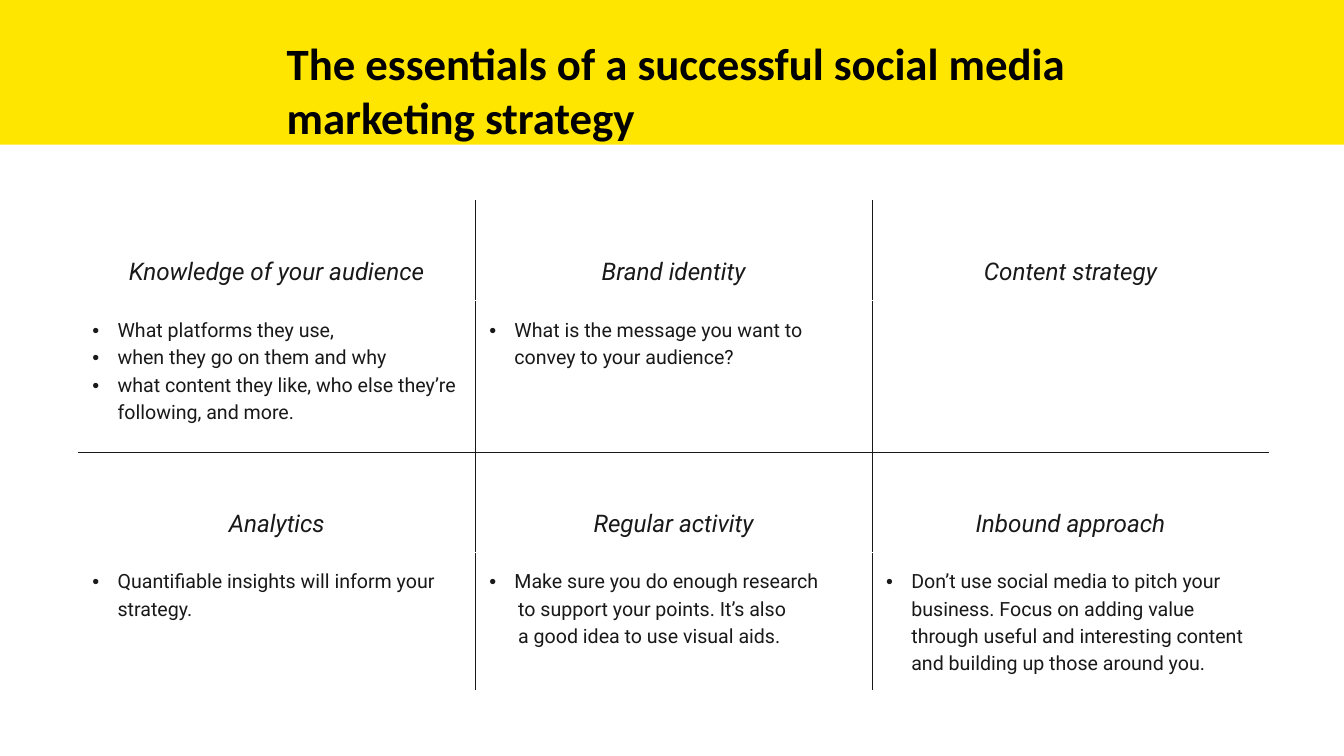
from dataclasses import dataclass

from lxml.etree import SubElement
from pptx import Presentation
from pptx.dml.color import RGBColor as Color
from pptx.enum.shapes import MSO_SHAPE as Preset
from pptx.enum.text import MSO_ANCHOR as Anchor, PP_ALIGN as Align
from pptx.oxml.ns import qn
from pptx.util import Pt


@dataclass(frozen=True)
class Theme:
    band: str = "FEE600"
    paper: str = "FFFFFF"
    ink: str = "191919"
    title_ink: str = "000000"
    title_font: str = "Calibri"
    body_font: str = "Roboto"
    title_size: float = 48
    heading_size: float = 26
    body_size: float = 21
    leading: float = 1.4
    rule: float = 0.75
    cell_inset: float = 15
    bullet_indent: float = 27
    plain_indent: float = 31


HEADINGS = [
    ["Knowledge of your audience", "Brand identity", "Content strategy"],
    ["Analytics", "Regular activity", "Inbound approach"],
]
# Each cell holds its bulleted lines, then its plain lines.
DETAILS = [
    [
        (["What platforms they use,", "when they go on them and why",
          "what content they like, who else they’re following, and more."], []),
        (["What is the message you want to convey to your audience?"], []),
        ([], []),
    ],
    [
        (["Quantifiable insights will inform your strategy."], []),
        (["Make sure you do enough research"],
         ["to support your points. It’s also", "a good idea to use visual aids."]),
        (["Don’t use social media to pitch your business. Focus on adding value "
          "through useful and interesting content and building up those around you."], []),
    ],
]
COLUMN_WIDTH = 425.25
ROW_HEIGHTS = [107.25, 162, 107.25, 137.5]


def write(para, text, *, font, size, color, bold=False, italic=False,
          align=None, leading=None):
    span = para.add_run()
    span.text = text
    span.font.name = font
    span.font.size = Pt(size)
    span.font.bold = bold
    span.font.italic = italic
    span.font.color.rgb = Color.from_string(color)
    para.alignment = align
    if leading:
        para.line_spacing = Pt(size * leading)


def indent(para, left, bullet=False):
    props = para._p.get_or_add_pPr()
    props.set("marL", str(Pt(left)))
    if bullet:
        props.set("indent", str(-Pt(left)))
        SubElement(props, qn("a:buFont"), typeface="Arial")
        SubElement(props, qn("a:buChar"), char="•")


class SlideBuilder:
    def __init__(self, page, theme):
        self.page = page
        self.theme = theme

    def band(self, left, top, width, height):
        shape = self.page.shapes.add_shape(
            Preset.RECTANGLE, Pt(left), Pt(top), Pt(width), Pt(height))
        shape.shadow.inherit = False
        shape.fill.solid()
        shape.fill.fore_color.rgb = Color.from_string(self.theme.band)
        shape.line.fill.background()

    def title(self, text, left, top, width, height):
        box = self.page.shapes.add_textbox(Pt(left), Pt(top), Pt(width), Pt(height))
        box.text_frame.word_wrap = True
        write(box.text_frame.paragraphs[0], text, font=self.theme.title_font,
              size=self.theme.title_size, color=self.theme.title_ink, bold=True)

    def table(self, left, top, column_width, row_heights, column_count):
        frame = self.page.shapes.add_table(
            len(row_heights), column_count, Pt(left), Pt(top),
            Pt(column_width * column_count), Pt(sum(row_heights)))
        table = frame.table
        table.first_row = table.horz_banding = False
        for column in table.columns:
            column.width = Pt(column_width)
        for row, height in zip(table.rows, row_heights):
            row.height = Pt(height)
        return table

    def style_cell(self, cell, inner_edges):
        """Rule the inner edges (letters of LRTB) in ink and the others in paper."""
        theme = self.theme
        inset = Pt(theme.cell_inset)
        cell.margin_left = cell.margin_right = inset
        cell.margin_top = cell.margin_bottom = inset
        props = cell._tc.get_or_add_tcPr()
        for edge in "LRTB":
            line = SubElement(props, qn(f"a:ln{edge}"), w=str(Pt(theme.rule)))
            fill = SubElement(line, qn("a:solidFill"))
            color = theme.ink if edge in inner_edges else theme.paper
            SubElement(fill, qn("a:srgbClr"), val=color)
        cell.fill.solid()
        cell.fill.fore_color.rgb = Color.from_string(theme.paper)

    def heading(self, cell, text):
        cell.vertical_anchor = Anchor.BOTTOM
        write(cell.text_frame.paragraphs[0], text, font=self.theme.body_font,
              size=self.theme.heading_size, color=self.theme.ink, italic=True,
              align=Align.CENTER, leading=self.theme.leading)

    def details(self, cell, bulleted, plain):
        theme = self.theme
        frame = cell.text_frame
        for number, text in enumerate(bulleted + plain):
            para = frame.add_paragraph() if number else frame.paragraphs[0]
            write(para, text, font=theme.body_font, size=theme.body_size,
                  color=theme.ink, leading=theme.leading)
            is_bullet = number < len(bulleted)
            indent(para, theme.bullet_indent if is_bullet else theme.plain_indent, is_bullet)


def main():
    deck = Presentation()
    deck.slide_width, deck.slide_height = Pt(1440), Pt(810)
    page = deck.slides.add_slide(deck.slide_layouts[6])
    builder = SlideBuilder(page, Theme())

    builder.band(0, 0, 1440, 155)
    column_count = len(HEADINGS[0])
    table = builder.table(84, 215, COLUMN_WIDTH, ROW_HEIGHTS, column_count)
    for row in range(len(ROW_HEIGHTS)):
        group, is_detail = divmod(row, 2)
        for column in range(column_count):
            cell = table.cell(row, column)
            edges = ("L" if column > 0 else "") + ("R" if column < column_count - 1 else "")
            edges += {1: "B", 2: "T"}.get(row, "")
            builder.style_cell(cell, edges)
            if is_detail:
                builder.details(cell, *DETAILS[group][column])
            else:
                builder.heading(cell, HEADINGS[group][column])
    builder.title("The essentials of a successful social media marketing strategy",
                  300, 34.5, 882, 124)
    deck.save("out.pptx")


if __name__ == "__main__":
    main()
